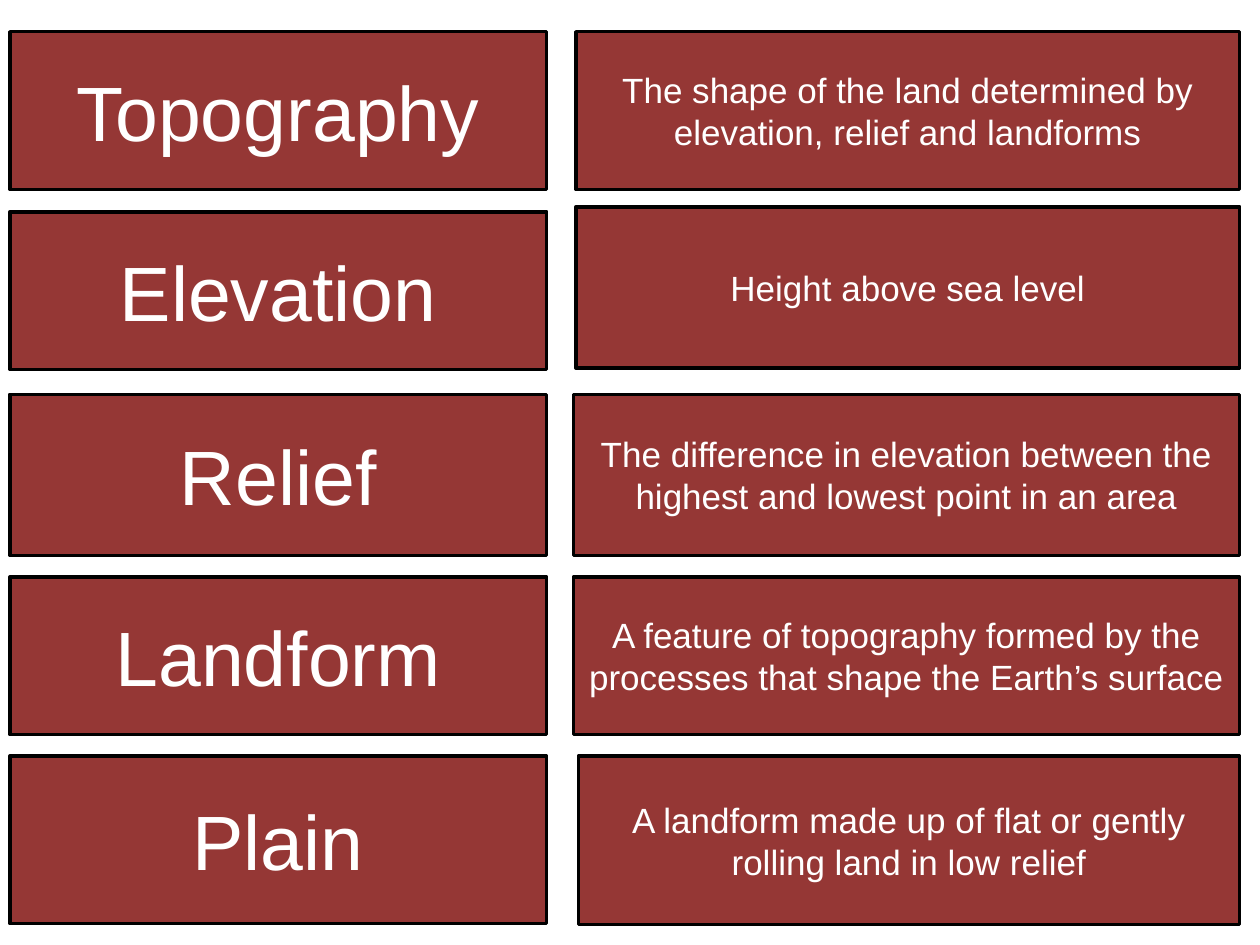
"""Build a slide of landform terms beside their definitions."""
import pptx
import pptx.util
import pptx.dml.color
import pptx.enum.shapes
import pptx.enum.text

Cm, Pt = pptx.util.Cm, pptx.util.Pt
RGB = pptx.dml.color.RGBColor.from_string
hues = {"fill": "953735", "line": "000000", "text": "FFFFFF"}

deck = pptx.Presentation()
deck.slide_width, deck.slide_height = Cm(25.4), Cm(19.05)
slide = deck.slides.add_slide(deck.slide_layouts[6])


def add_box(text, size, left, top, width, height):
    box = slide.shapes.add_shape(
        pptx.enum.shapes.MSO_SHAPE.FLOWCHART_PROCESS,
        Cm(left), Cm(top), Cm(width), Cm(height))
    box.shadow.inherit = False
    box.fill.solid()
    box.fill.fore_color.rgb = RGB(hues["fill"])
    box.line.color.rgb = RGB(hues["line"])
    box.line.width = Pt(2)
    frame = box.text_frame
    frame.word_wrap = True
    frame.vertical_anchor = pptx.enum.text.MSO_ANCHOR.MIDDLE
    para = frame.paragraphs[0]
    para.alignment = pptx.enum.text.PP_ALIGN.CENTER
    run = para.add_run()
    run.text = text
    run.font.color.rgb = RGB(hues["text"])
    for name, value in {"name": "Arial", "size": Pt(size)}.items():
        setattr(run.font, name, value)


edge = 24.99
rows = [
    ("Topography", 0.64, 3.18, 11.61, 0.64, 3.18,
     "The shape of the land determined by elevation, relief and landforms"),
    ("Elevation", 4.27, 3.18, 11.61, 4.17, 3.25,
     "Height above sea level"),
    ("Relief", 7.95, 3.25, 11.56, 7.95, 3.25,
     "The difference in elevation between the highest and lowest point in an area"),
    ("Landform", 11.63, 3.18, 11.56, 11.63, 3.18,
     "A feature of topography formed by the processes that shape the Earth’s surface"),
    ("Plain", 15.24, 3.38, 11.66, 15.24, 3.4,
     "A landform made up of flat or gently rolling land in low relief"),
]
for term, top, height, left, y, tall, sense in rows:
    add_box(term, 44, 0.2, top, 10.82, height)
    add_box(sense, 20, left, y, edge - left, tall)

deck.save("out.pptx")
